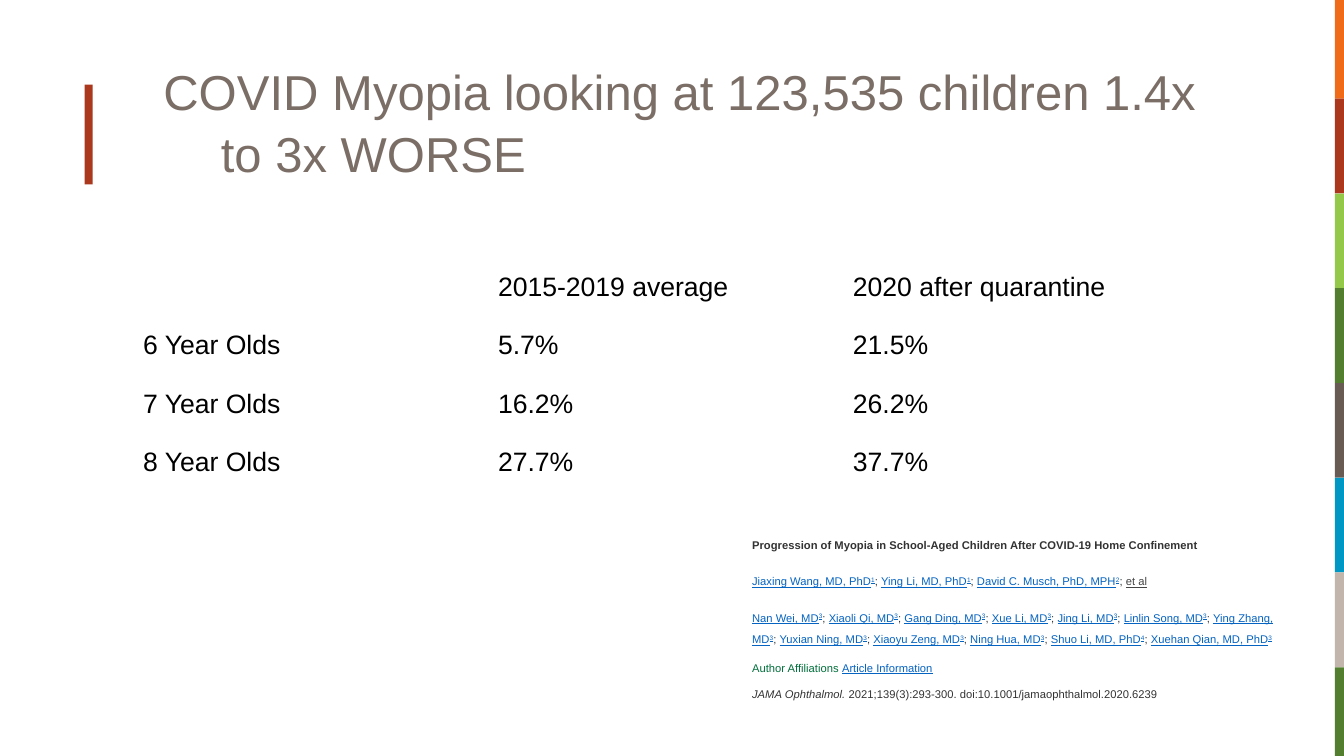
from dataclasses import dataclass

from pptx import Presentation
from pptx import util as u
from pptx.dml.color import RGBColor
from pptx.enum import shapes, text


@dataclass(frozen=True)
class Theme:
    font: str = "Arial"
    title: str = "7B6E66"
    body: str = "000000"
    citation: str = "333333"
    et_al: str = "444444"
    link: str = "0563C1"
    affiliations: str = "006F3B"
    accent: str = "AB371D"
    stripes: tuple = ("EF6B1A", "AB371D", "94C84B", "537D2F",
                      "675B54", "0097C4", "C2B6AC", "537D2F")
    title_size: int = 35
    table_size: int = 19
    citation_size: int = 8


THEME = Theme()
INSET = u.Inches(0.13)

MYOPIA_RATES = [
    ("", "2015-2019 average", "2020 after quarantine"),
    ("6 Year Olds", "5.7%", "21.5%"),
    ("7 Year Olds", "16.2%", "26.2%"),
    ("8 Year Olds", "27.7%", "37.7%"),
]
LEAD_AUTHORS = [("Jiaxing Wang, MD, PhD", "1"), ("Ying Li, MD, PhD", "1"),
                ("David C. Musch, PhD, MPH", "2")]
OTHER_AUTHORS = [
    ("Nan Wei, MD", "3"), ("Xiaoli Qi, MD", "3"), ("Gang Ding, MD", "3"),
    ("Xue Li, MD", "3"), ("Jing Li, MD", "3"), ("Linlin Song, MD", "3"),
    ("Ying Zhang, MD", "3"), ("Yuxian Ning, MD", "3"), ("Xiaoyu Zeng, MD", "3"),
    ("Ning Hua, MD", "3"), ("Shuo Li, MD, PhD", "4"), ("Xuehan Qian, MD, PhD", "3"),
]


def style_font(font, size, color):
    font.name = THEME.font
    font.size = u.Pt(size)
    font.color.rgb = RGBColor.from_string(color)


def set_insets(holder):
    holder.margin_left = holder.margin_right = INSET
    holder.margin_top = holder.margin_bottom = INSET


def add_block(slide, left, top, width, height, color):
    block = slide.shapes.add_shape(
        shapes.MSO_SHAPE.RECTANGLE, u.Inches(left), u.Inches(top),
        u.Inches(width), u.Inches(height))
    block.shadow.inherit = False
    block.fill.solid()
    block.fill.fore_color.rgb = RGBColor.from_string(color)
    block.line.fill.background()


def add_side_stripes(slide):
    first_height, height = 0.98, 0.94
    top = 0
    for index, color in enumerate(THEME.stripes):
        bottom = min(first_height + index * height, 7.5)
        add_block(slide, 13.24, top, 0.09, bottom - top, color)
        top = bottom


def set_title(slide, wording):
    title = slide.shapes.title
    title.left, title.top = u.Inches(1.49), u.Inches(0.45)
    title.width, title.height = u.Inches(10.97), u.Inches(1.8)
    frame = title.text_frame
    frame.text = wording
    frame.word_wrap = True
    frame.auto_size = text.MSO_AUTO_SIZE.NONE
    frame.vertical_anchor = text.MSO_ANCHOR.TOP
    set_insets(frame)
    heading = frame.paragraphs[0]
    heading.alignment = text.PP_ALIGN.LEFT
    heading.line_spacing = 1.05
    properties = heading._p.get_or_add_pPr()
    properties.set("marL", str(u.Inches(0.57)))
    properties.set("indent", str(-u.Inches(0.57)))
    style_font(heading.runs[0].font, THEME.title_size, THEME.title)


def add_rates_table(slide, rows):
    column_width, row_height = u.Inches(3.52), u.Inches(0.58)
    table = slide.shapes.add_table(
        len(rows), len(rows[0]), u.Inches(1.29), u.Inches(2.57),
        column_width * len(rows[0]), row_height * len(rows)).table
    table.first_row = table.horz_banding = False
    for row_index, row in enumerate(rows):
        for column_index, value in enumerate(row):
            cell = table.cell(row_index, column_index)
            cell.fill.background()
            set_insets(cell)
            cell.text = value
            style_font(cell.text_frame.paragraphs[0].font,
                       THEME.table_size, THEME.body)


def add_run(paragraph, wording, color=THEME.citation, bold=False, italic=False,
            underline=False, superscript=False):
    run = paragraph.add_run()
    run.text = wording
    style_font(run.font, THEME.citation_size, color)
    run.font.bold, run.font.italic = bold, italic
    run.font.underline = underline
    if superscript:
        run.font._element.set("baseline", "30000")


def add_link(paragraph, wording, superscript=False):
    """Add wording that looks like a link but has no target."""
    add_run(paragraph, wording, THEME.link, underline=True, superscript=superscript)


def add_authors(paragraph, authors):
    for index, (author, affiliation) in enumerate(authors):
        if index:
            add_run(paragraph, "; ")
        add_link(paragraph, author)
        add_link(paragraph, affiliation, superscript=True)


def add_citation(slide):
    frame = slide.shapes.add_textbox(
        u.Inches(7.33), u.Inches(5.17), u.Inches(5.53), u.Inches(1.12)).text_frame
    frame.word_wrap = True
    frame.vertical_anchor = text.MSO_ANCHOR.TOP
    set_insets(frame)

    def next_paragraph(line_spacing, space_before):
        paragraph = frame.add_paragraph()
        paragraph.line_spacing = line_spacing
        paragraph.space_before = u.Pt(space_before)
        return paragraph

    article = frame.paragraphs[0]
    article.line_spacing = 1.3
    add_run(article, "Progression of Myopia in School-Aged Children "
                     "After COVID-19 Home Confinement", bold=True)

    lead = next_paragraph(1.6, 10.7)
    add_authors(lead, LEAD_AUTHORS)
    add_run(lead, "; ")
    add_run(lead, "et al", THEME.et_al, underline=True)

    add_authors(next_paragraph(1.6, 10.7), OTHER_AUTHORS)

    affiliations = next_paragraph(1.15, 9.3)
    add_run(affiliations, "Author Affiliations ", THEME.affiliations)
    add_link(affiliations, "Article Information")

    journal = next_paragraph(1.15, 8)
    add_run(journal, "JAMA Ophthalmol. ", italic=True)
    add_run(journal, "2021;139(3):293-300. doi:10.1001/jamaophthalmol.2020.6239")


def main():
    deck = Presentation()
    deck.slide_width, deck.slide_height = u.Inches(13.33), u.Inches(7.5)
    slide = deck.slides.add_slide(deck.slide_layouts.get_by_name("Title Only"))
    add_block(slide, 0.84, 0.84, 0.08, 0.99, THEME.accent)
    add_side_stripes(slide)
    set_title(slide, "COVID Myopia looking at 123,535 children 1.4x to 3x WORSE")
    add_rates_table(slide, MYOPIA_RATES)
    add_citation(slide)
    deck.save("out.pptx")


if __name__ == "__main__":
    main()
